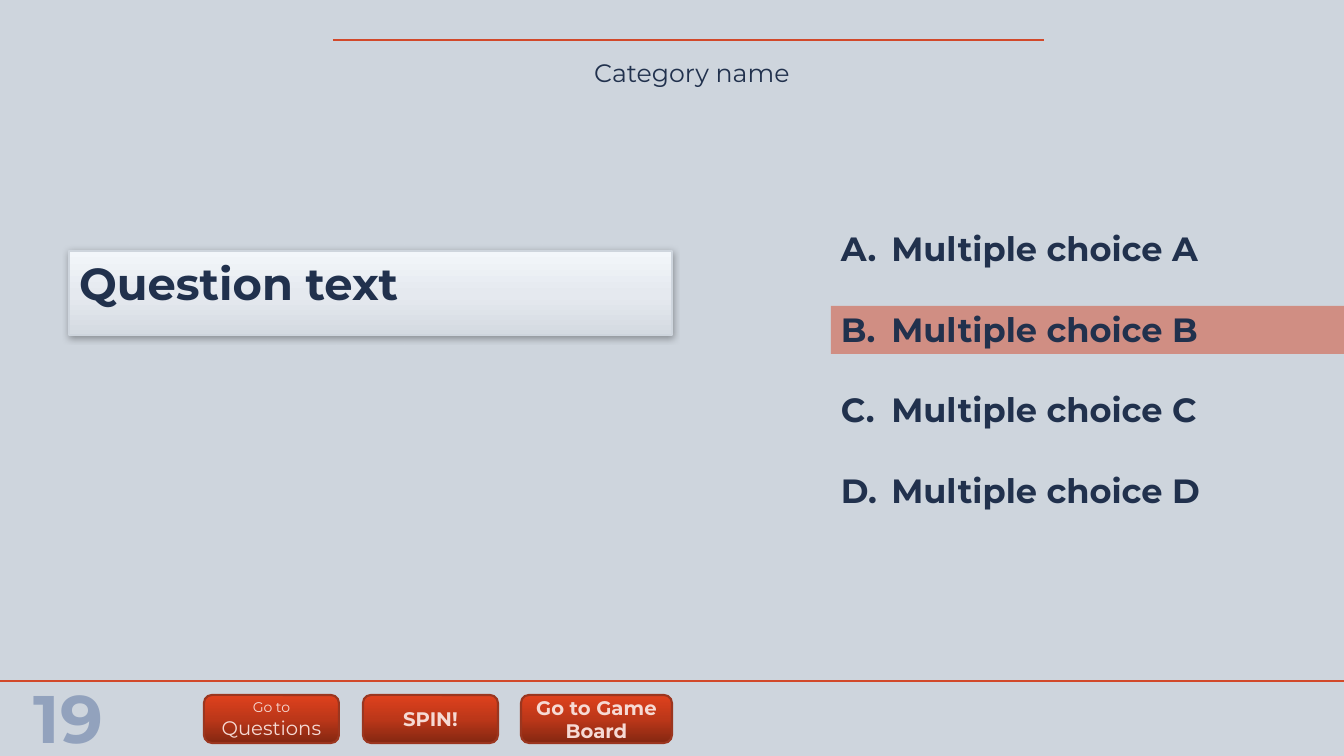
from dataclasses import dataclass

import lxml.etree
import pptx
import pptx.dml.color
import pptx.enum.shapes
import pptx.enum.text
import pptx.oxml.ns
import pptx.util

EMU_PER_PX = 914400 / 100.8
FONT_NAME = "Montserrat"
COLORS = {
    "background": "CED5DD",
    "accent": "D2492A",
    "text": "21314D",
    "number": "92A2BD",
    "button_text": "F6DAD4",
    "button_line": "9B361F",
    "shadow": "000000",
}
BUTTON_STOPS = [(0, "842711"), (50, "BC3719"), (100, "DF411D")]
QUESTION_STOPS = [(0, "D4DAE1"), (48, "E5E9EF"), (100, "F2F6FA")]
ALIGN = pptx.enum.text.PP_ALIGN
ANCHOR = pptx.enum.text.MSO_ANCHOR
SHAPE = pptx.enum.shapes.MSO_SHAPE
qn = pptx.oxml.ns.qn


@dataclass(frozen=True)
class Box:
    left: int
    top: int
    width: int
    height: int

    def emu(self) -> list[int]:
        return [px(side) for side in (self.left, self.top, self.width, self.height)]


@dataclass(frozen=True)
class Rule:
    left: int
    right: int
    top: int
    points: int


@dataclass(frozen=True)
class Label:
    text: str
    size: int
    color: str
    bold: bool = False


@dataclass(frozen=True)
class Button:
    left: int
    width: int
    lines: tuple[Label, ...]


RULES = [Rule(0, 1344, 681, 1), Rule(333, 1044, 40, 2)]
BUTTONS = [
    Button(204, 135, (Label("Go to", 10, "button_text"),
                      Label("Questions", 14, "button_text"))),
    Button(363, 135, (Label("SPIN!", 14, "button_text", True),)),
    Button(521, 151, (Label("Go to Game Board", 14, "button_text", True),)),
]
CHOICES = [Label(f"Multiple choice {letter}", 24, "text", True) for letter in "ABCD"]


def px(length: int) -> int:
    return round(length * EMU_PER_PX)


def rgb(name: str) -> pptx.dml.color.RGBColor:
    return pptx.dml.color.RGBColor.from_string(COLORS[name])


def add_run(paragraph, label: Label) -> None:
    run = paragraph.add_run()
    run.text = label.text
    run.font.name = FONT_NAME
    run.font.size = pptx.util.Pt(label.size)
    run.font.bold = label.bold
    run.font.color.rgb = rgb(label.color)


def add_rule(slide, rule: Rule) -> None:
    connector = slide.shapes.add_connector(
        pptx.enum.shapes.MSO_CONNECTOR.STRAIGHT,
        px(rule.left), px(rule.top), px(rule.right), px(rule.top))
    connector.line.color.rgb = rgb("accent")
    connector.line.width = pptx.util.Pt(rule.points)
    lxml.etree.SubElement(connector._element.spPr, qn("a:effectLst"))


def set_gradient(shape, stops: list[tuple[int, str]]) -> None:
    """Fill the shape from bottom to top."""
    shape.fill.gradient()
    shape.fill.gradient_angle = 90
    stop_list = shape._element.spPr.find(".//" + qn("a:gsLst"))
    for old_stop in list(stop_list):
        stop_list.remove(old_stop)
    for percent, color in stops:
        stop = lxml.etree.SubElement(stop_list, qn("a:gs"), pos=str(percent * 1000))
        lxml.etree.SubElement(stop, qn("a:srgbClr"), val=color)


def set_line(shape, color: str, points: float) -> None:
    shape.line.color.rgb = rgb(color)
    shape.line.width = pptx.util.Pt(points)


def fit_text(frame) -> None:
    frame.word_wrap = True
    frame.auto_size = pptx.enum.text.MSO_AUTO_SIZE.SHAPE_TO_FIT_TEXT


def add_centered_text(slide, box: Box, label: Label) -> None:
    frame = slide.shapes.add_textbox(*box.emu()).text_frame
    fit_text(frame)
    frame.paragraphs[0].alignment = ALIGN.CENTER
    add_run(frame.paragraphs[0], label)


def add_question(slide, box: Box, label: Label) -> None:
    title = slide.shapes.title
    title.left, title.top, title.width, title.height = box.emu()
    set_gradient(title, QUESTION_STOPS)
    set_line(title, "background", 1)
    title.shadow.inherit = False
    effects = title._element.spPr.find(qn("a:effectLst"))
    shadow = lxml.etree.SubElement(
        effects, qn("a:outerShdw"), blurRad=str(pptx.util.Pt(5)),
        dist=str(pptx.util.Pt(1)), dir="5400000", rotWithShape="0")
    color = lxml.etree.SubElement(shadow, qn("a:srgbClr"), val=COLORS["shadow"])
    lxml.etree.SubElement(color, qn("a:alpha"), val="32000")
    fit_text(title.text_frame)
    title.text_frame.vertical_anchor = ANCHOR.TOP
    title.text_frame.paragraphs[0].alignment = ALIGN.LEFT
    add_run(title.text_frame.paragraphs[0], label)


def add_highlight(slide, box: Box) -> None:
    highlight = slide.shapes.add_shape(SHAPE.RECTANGLE, *box.emu())
    highlight.shadow.inherit = False
    highlight.fill.solid()
    highlight.fill.fore_color.rgb = rgb("accent")
    color = highlight._element.spPr.find(".//" + qn("a:srgbClr"))
    lxml.etree.SubElement(color, qn("a:alpha"), val="50000")
    highlight.line.fill.background()


def add_choices(slide, box: Box, choices: list[Label]) -> None:
    frame = slide.shapes.add_textbox(*box.emu()).text_frame
    fit_text(frame)
    indent = pptx.util.Inches(0.5)
    for index, choice in enumerate(choices):
        paragraph = frame.add_paragraph() if index else frame.paragraphs[0]
        properties = paragraph._p.get_or_add_pPr()
        properties.set("marL", str(indent))
        properties.set("indent", str(-indent))
        if index:
            paragraph.space_before = pptx.util.Pt(28.8)
        lxml.etree.SubElement(properties, qn("a:buAutoNum"), type="alphaUcPeriod")
        add_run(paragraph, choice)


def add_button(slide, button: Button) -> None:
    box = Box(button.left, 695, button.width, 48)
    shape = slide.shapes.add_shape(SHAPE.ROUNDED_RECTANGLE, *box.emu())
    shape.shadow.inherit = False
    set_gradient(shape, BUTTON_STOPS)
    set_line(shape, "button_line", 1.5)
    shape.text_frame.word_wrap = True
    shape.text_frame.vertical_anchor = ANCHOR.MIDDLE
    paragraph = shape.text_frame.paragraphs[0]
    paragraph.alignment = ALIGN.CENTER
    for index, label in enumerate(button.lines):
        if index:
            paragraph.add_line_break()
        add_run(paragraph, label)


def main() -> None:
    presentation = pptx.Presentation()
    presentation.slide_width = px(1344)
    presentation.slide_height = px(756)
    slide = presentation.slides.add_slide(presentation.slide_layouts[5])
    slide.background.fill.solid()
    slide.background.fill.fore_color.rgb = rgb("background")

    # Header and footer
    for rule in RULES:
        add_rule(slide, rule)
    add_centered_text(slide, Box(339, 52, 706, 40), Label("Category name", 18, "text"))
    add_centered_text(slide, Box(21, 671, 95, 92), Label("19", 48, "number", True))
    for button in BUTTONS:
        add_button(slide, button)

    # Question and answers
    add_question(slide, Box(69, 251, 603, 65), Label("Question text", 32, "text", True))
    add_highlight(slide, Box(831, 306, 513, 48))
    add_choices(slide, Box(831, 223, 389, 295), CHOICES)

    presentation.save("out.pptx")


if __name__ == "__main__":
    main()
